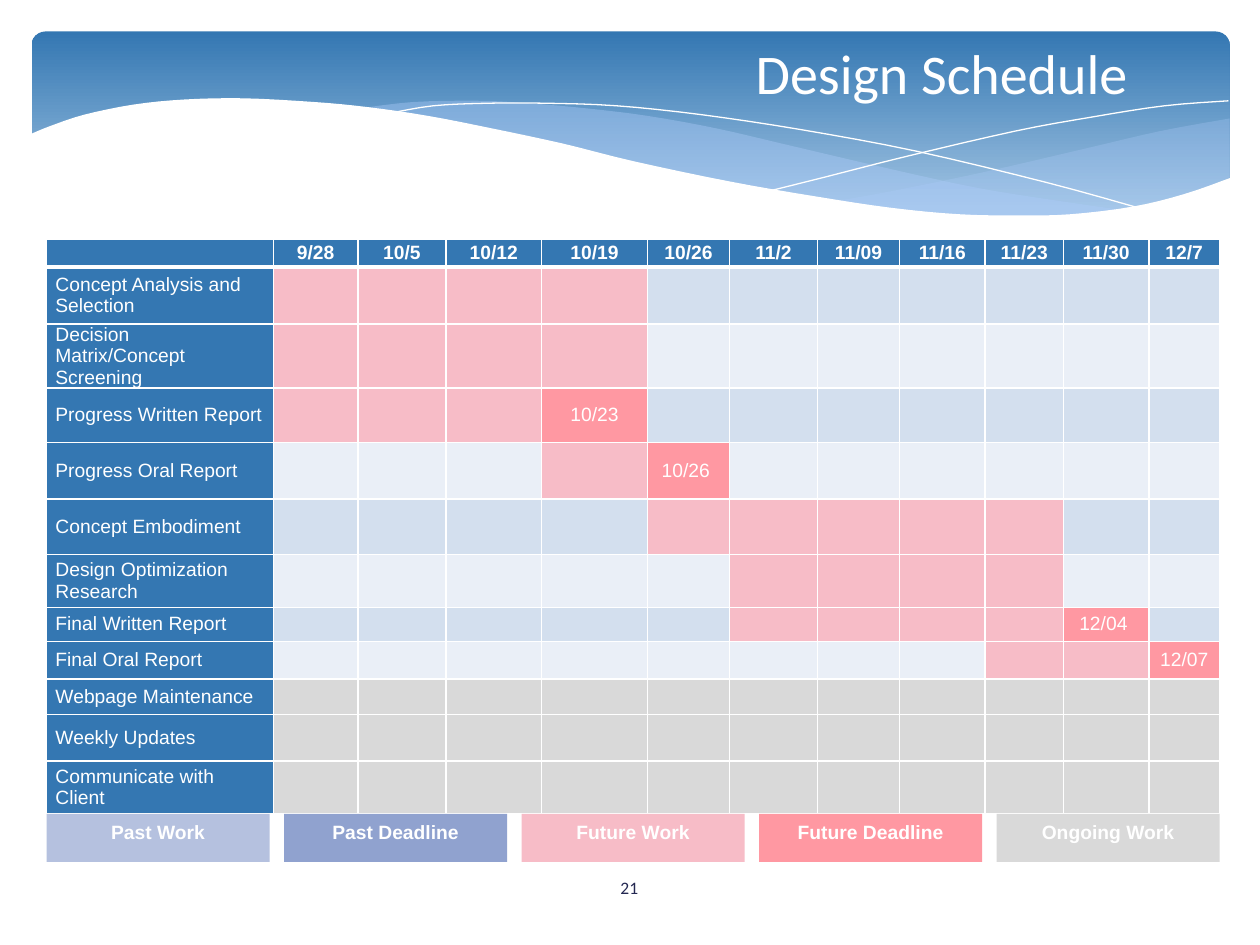
"""Build the design schedule slide with its wave banner, table and legend."""
from lxml import etree
from pptx import Presentation
from pptx import util as u
from pptx.dml.color import RGBColor
from pptx.enum import shapes, text
from pptx.oxml.ns import qn

BLUE, WHITE, WORK, DUE, GREY = "3477B2", "FFFFFF", "F7BCC7", "FF98A2", "D9D9D9"


def paint(fill, hue):
    fill.solid()
    fill.fore_color.rgb = RGBColor.from_string(hue)


def write(frame, words, size=11, font="Arial", hue=WHITE, bold=False,
          align="CENTER", anchor="TOP"):
    frame.word_wrap = True
    frame.vertical_anchor = text.MSO_ANCHOR[anchor]
    par = frame.paragraphs[0]
    par.alignment = text.PP_ALIGN[align]
    run = par.add_run()
    run.text = words
    run.font.size = u.Pt(size)
    run.font.name = font
    run.font.bold = bold
    paint(run.font.fill, hue)


deck = Presentation()
deck.slide_width, deck.slide_height = u.Inches(10), u.Inches(7.5)
slide = deck.slides.add_slide(deck.slide_layouts[6])
items = slide.shapes

banner = items.add_shape(shapes.MSO_SHAPE.ROUNDED_RECTANGLE, u.Inches(0.25),
                         u.Inches(0.25), u.Inches(9.51), u.Inches(1.56))
banner.adjustments[0] = 0.071
banner.shadow.inherit = False
banner.line.fill.background()
banner.fill.gradient()
banner.fill.gradient_angle = 270
for stop, hue, place in zip(banner.fill.gradient_stops, (BLUE, "A1C4E3"), (0, 0.9)):
    stop.color.rgb = RGBColor.from_string(hue)
    stop.position = place

# Each wave: smooth edges joined by straight lines, fill, opacity in percent
waves = [
    ([[(9.76, 0.94), (9.21, 1.04), (8.61, 1.18), (7.79, 1.37), (7.06, 1.52), (6.61, 1.6)],
      [(6.61, 1.6), (7.05, 1.65), (7.57, 1.7), (8.14, 1.72), (8.63, 1.7), (9.05, 1.63),
       (9.42, 1.54), (9.76, 1.41)]], "ACCBF9", 29),
    ([[(8.93, 1.67), (8.37, 1.59), (7.75, 1.49), (7.06, 1.34), (6.29, 1.16), (5.69, 1.02),
       (5.14, 0.92), (4.65, 0.86), (4.2, 0.82), (3.8, 0.8), (3.28, 0.81), (2.86, 0.86)],
      [(2.86, 0.86), (3.42, 0.94), (4.04, 1.06), (4.49, 1.16), (5.3, 1.35), (6.01, 1.5),
       (6.65, 1.61), (7.22, 1.68), (7.73, 1.72), (8.18, 1.73), (8.57, 1.71), (8.93, 1.67)]],
     "ACCBF9", 40),
    ([[(3.09, 0.9), (3.44, 0.84), (3.87, 0.82), (4.33, 0.82), (4.89, 0.84), (5.56, 0.91),
       (6.36, 1.03), (7.27, 1.2), (8.31, 1.45), (9.07, 1.66)]], None, 100),
    ([[(6.13, 1.51), (6.53, 1.41), (7.2, 1.24), (8.06, 1.04), (8.66, 0.93), (9.24, 0.84),
       (9.75, 0.8)]], None, 100),
    ([[(9.77, 1.41), (9.4, 1.54), (8.99, 1.64), (8.5, 1.7), (8.09, 1.71), (7.61, 1.7),
       (7.08, 1.65), (6.48, 1.56), (5.79, 1.44), (5.03, 1.28), (4.47, 1.14), (3.91, 1.02),
       (3.4, 0.92), (2.92, 0.85), (2.5, 0.81), (1.93, 0.78), (1.46, 0.79), (1.06, 0.83),
       (0.67, 0.91), (0.4, 1), (0.23, 1.07)], [(0.23, 2.24), (9.77, 2.24)]], WHITE, 100),
]
for edges, hue, alpha in waves:
    dots = []
    for edge in edges:
        ends = [edge[0], *edge, edge[-1]]
        for a, b, c, d in zip(ends, ends[1:], ends[2:], ends[3:]):
            for t in (0, 0.25, 0.5, 0.75):
                dots.append([u.Inches(
                    q + t * (r - p) / 2 + t * t * (p - 2.5 * q + 2 * r - s / 2)
                    + t ** 3 * (3 * q - p - 3 * r + s) / 2)
                    for p, q, r, s in zip(a, b, c, d)])
        dots.append([u.Inches(n) for n in edge[-1]])
    path = items.build_freeform(*dots[0])
    path.add_line_segments(dots[1:], close=hue is not None)
    wave = path.convert_to_shape()
    wave.shadow.inherit = False
    if hue:
        paint(wave.fill, hue)
        wave.line.fill.background()
        tint = wave.fill._xPr.find(".//" + qn("a:srgbClr"))
        etree.SubElement(tint, qn("a:alpha"), val=str(alpha * 1000))
    else:
        wave.fill.background()
        paint(wave.line.fill, WHITE)
        wave.line.width = u.Pt(0)

dates = ["9/28", "10/5", "10/12", "10/19", "10/26", "11/2", "11/09", "11/16",
         "11/23", "11/30", "12/7"]
# Task, work columns from and to, deadline column, deadline
tasks = [
    ("Concept Analysis and Selection", 1, 4, 0, ""),
    ("Decision Matrix/Concept Screening", 1, 4, 0, ""),
    ("Progress Written Report", 1, 3, 4, "10/23"),
    ("Progress Oral Report", 4, 4, 5, "10/26 "),
    ("Concept Embodiment", 5, 9, 0, ""),
    ("Design Optimization Research", 6, 9, 0, ""),
    ("Final Written Report", 6, 9, 10, "12/04 "),
    ("Final Oral Report", 9, 10, 11, "12/07 "),
    ("Webpage Maintenance", 0, 0, 0, ""),
    ("Weekly Updates", 0, 0, 0, ""),
    ("Communicate with Client", 0, 0, 0, ""),
]
wides = [1.8, 0.67, 0.7, 0.76, 0.84, 0.65, 0.7, 0.65, 0.68, 0.62, 0.68, 0.56]
highs = [0.22, 0.45, 0.41, 0.43, 0.45, 0.44, 0.42, 0.27, 0.3, 0.28, 0.37, 0.42]
grid = items.add_table(len(highs), len(wides), u.Inches(0.37), u.Inches(1.9),
                       u.Inches(9.32), u.Inches(4.45)).table
grid.first_row = grid.horz_banding = False
for col, wide in zip(grid.columns, wides):
    col.width = u.Inches(wide)
for row, high in zip(grid.rows, highs):
    row.height = u.Inches(high)

for i in range(len(highs)):
    for j in range(len(wides)):
        cell = grid.cell(i, j)
        cell.margin_left = cell.margin_right = u.Inches(0.07)
        cell.margin_top = cell.margin_bottom = 0
        cell.vertical_anchor = text.MSO_ANCHOR.MIDDLE
        words, hue = "", BLUE
        if i == 0:
            words = dates[j - 1] if j else ""
        else:
            task, first, last, due, day = tasks[i - 1]
            if j == 0:
                words = task
            elif not first:
                hue = GREY
            elif j == due:
                words, hue = day, DUE
            elif first <= j <= last:
                hue = WORK
            else:
                hue = "D3DFEE" if i % 2 else "EAEFF7"
        paint(cell.fill, hue)
        if words:
            write(cell.text_frame, words, bold=i == 0, anchor="MIDDLE",
                  align="CENTER" if j else "LEFT")
        else:
            par = cell.text_frame.paragraphs[0]._p
            etree.SubElement(par, qn("a:endParaRPr"), sz="1100")
        props = cell._tc.get_or_add_tcPr()
        for n, side in enumerate("LRTB"):
            thick = 3 if (i, side) in ((0, "B"), (1, "T")) else 1
            line = etree.Element(qn("a:ln" + side), w=str(u.Pt(thick)))
            tone = etree.SubElement(line, qn("a:solidFill"))
            etree.SubElement(tone, qn("a:srgbClr"), val=WHITE)
            props.insert(n, line)

keys = [("Past Work", "B5C1DF"), ("Past Deadline", "90A2CF"), ("Future Work", WORK),
        ("Future Deadline", DUE), ("Ongoing Work", GREY)]
for n, (words, hue) in enumerate(keys):
    key = items.add_shape(shapes.MSO_SHAPE.RECTANGLE, u.Inches(0.37 + n * 1.885),
                          u.Inches(6.46), u.Inches(1.77), u.Inches(0.38))
    key.shadow.inherit = False
    key.line.fill.background()
    paint(key.fill, hue)
    write(key.text_frame, words, bold=True)

title = items.add_textbox(u.Inches(2.25), u.Inches(0.26), u.Inches(6.8), u.Inches(1.37))
write(title.text_frame, "Design Schedule", size=32, font="Calibri", align="RIGHT")
page = items.add_textbox(u.Inches(4.36), u.Inches(6.84), u.Inches(1.27), u.Inches(0.4))
write(page.text_frame, "21", size=10, font="Calibri", hue="242852", anchor="MIDDLE")

deck.save("out.pptx")
